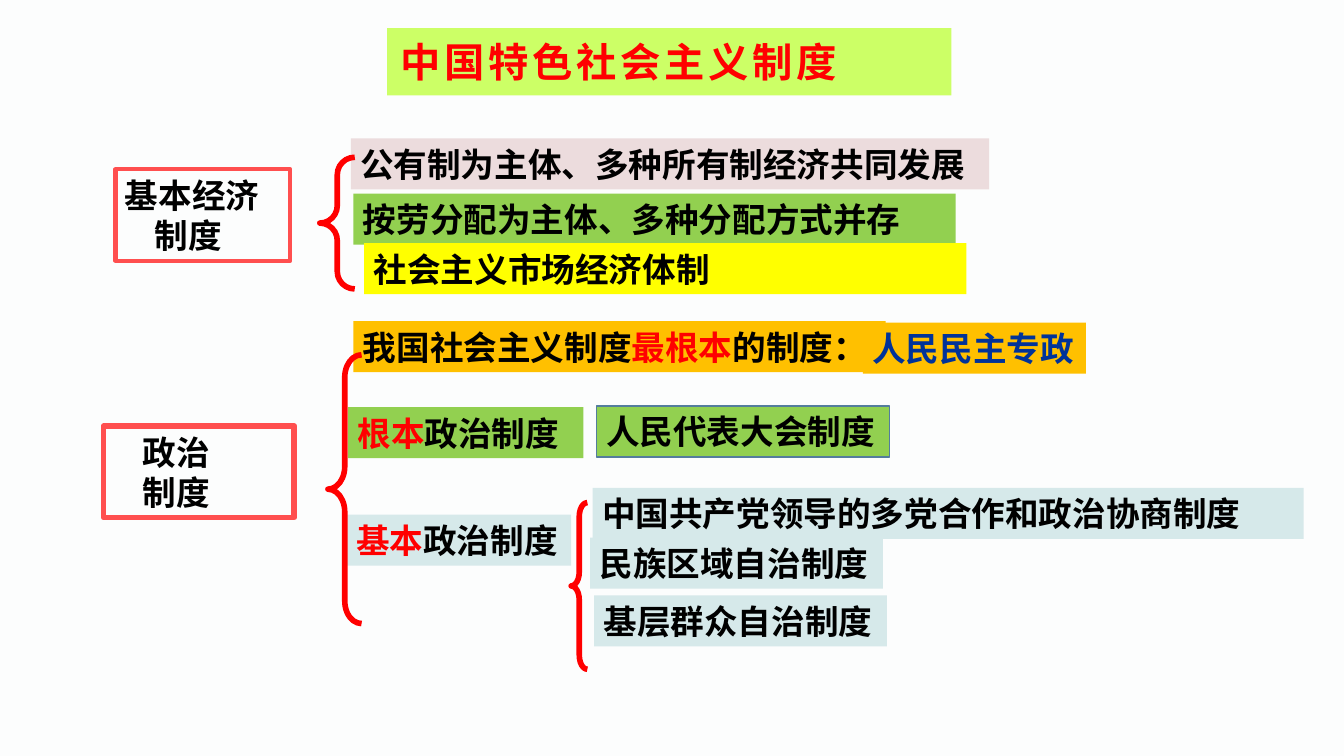
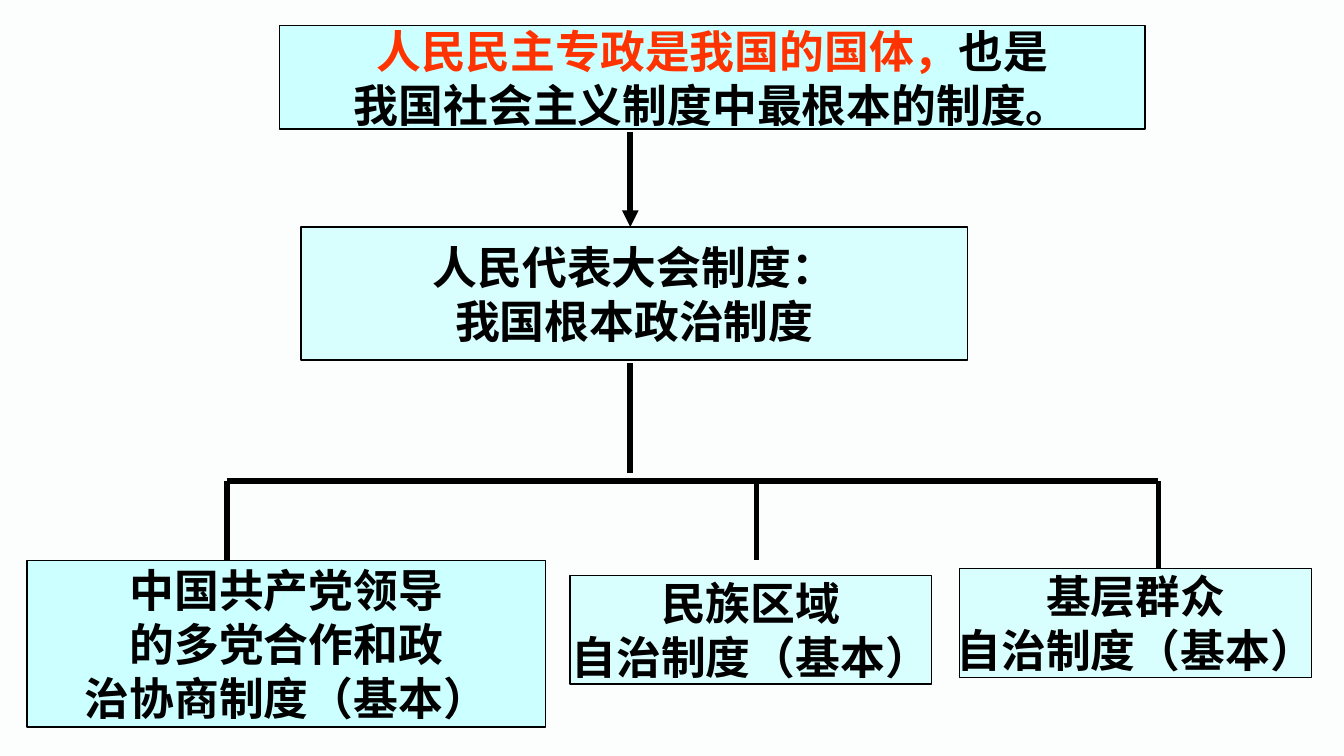
from lxml import etree
from pptx import Presentation
from pptx.dml.color import RGBColor
from pptx.enum.shapes import MSO_CONNECTOR, MSO_SHAPE
from pptx.enum.text import MSO_ANCHOR, MSO_AUTO_SIZE, PP_ALIGN
from pptx.oxml.ns import qn
from pptx.util import Inches, Pt

RECTANGLE, BRACE = MSO_SHAPE.RECTANGLE, MSO_SHAPE.LEFT_BRACE
STRAIGHT = MSO_CONNECTOR.STRAIGHT
TOP, MIDDLE = MSO_ANCHOR.TOP, MSO_ANCHOR.MIDDLE
LEFT, CENTER = PP_ALIGN.LEFT, PP_ALIGN.CENTER
FIXED_SIZE = MSO_AUTO_SIZE.NONE
TITLE_ONLY, BLANK = 5, 6

HAN_FONT, LATIN_FONT = "Noto Sans CJK SC", "Arial"
COLORS = {
    "background": "FCFDFD", "black": "000000", "red": "FF0000",
    "orange_red": "FF3300", "navy": "003399", "lime": "CCFF66",
    "rose": "ECDCDD", "green": "92D050", "yellow": "FFFF00",
    "amber": "FFC000", "mist": "D6E9EA", "frame": "FF4F4F",
    "steel": "547D9D", "cyan": "CCFFFF",
}
COLUMNS = 100  # the grid has square cells, a hundred to the slide's width


class Deck:
    """Holds the shared style and the slide being filled."""

    def __init__(self):
        self.prs = Presentation()
        self.prs.slide_width = Inches(10)
        self.prs.slide_height = Inches(10 * 9 / 16)
        self.cell = self.prs.slide_width // COLUMNS
        self.slide = None

    def grid(self, *cells):
        return [round(n * self.cell) for n in cells]

    def rgb(self, name):
        return RGBColor.from_string(COLORS[name])

    def new_slide(self, layout):
        self.slide = self.prs.slides.add_slide(self.prs.slide_layouts[layout])
        fill = self.slide.background.fill
        fill.solid()
        fill.fore_color.rgb = self.rgb("background")

    def paint(self, shape, fill=None, line=None, width=0.75, opacity=None):
        if fill:
            shape.fill.solid()
            shape.fill.fore_color.rgb = self.rgb(fill)
        else:
            shape.fill.background()
        if opacity:
            color = shape.fill._xPr.find(".//" + qn("a:srgbClr"))
            etree.SubElement(color, qn("a:alpha"), val=str(opacity * 1000))
        if line:
            shape.line.color.rgb = self.rgb(line)
            shape.line.width = Pt(width)
        else:
            shape.line.fill.background()

    def set_text(self, frame, lines, size, color="black", font=HAN_FONT,
                 align=LEFT, indents=(), spacing=None):
        """Each line is a string or a list of strings and (text, color) pairs."""
        for i, line in enumerate(lines):
            paragraph = frame.add_paragraph() if i else frame.paragraphs[0]
            paragraph.alignment = align
            paragraph.font.size = Pt(size)
            paragraph.font.bold = True
            paragraph.font.name = font
            paragraph.font.color.rgb = self.rgb(color)
            properties = paragraph.font._element
            latin = properties.find(qn("a:latin"))
            latin.addnext(etree.Element(qn("a:ea"), typeface=HAN_FONT))
            if spacing:
                properties.set("spc", str(spacing * 100))
            if indents and indents[i]:
                margin, = self.grid(indents[i])
                paragraph._p.get_or_add_pPr().set("marL", str(margin))
            for part in [line] if isinstance(line, str) else line:
                text, accent = (part, None) if isinstance(part, str) else part
                run = paragraph.add_run()
                run.text = text
                if accent:
                    run.font.color.rgb = self.rgb(accent)

    def title(self, at, text):
        title = self.slide.shapes.title
        title.left, title.top, title.width, title.height = self.grid(*at)
        self.paint(title, "lime")
        title.text_frame.auto_size = FIXED_SIZE
        title.text_frame.vertical_anchor = MIDDLE
        self.set_text(title.text_frame, [text], 21.6, "red", spacing=2)

    def box(self, at, **look):
        box = self.slide.shapes.add_shape(RECTANGLE, *self.grid(*at))
        box.shadow.inherit = False
        self.paint(box, **look)
        return box.text_frame

    def label(self, at, lines, color="black", indents=(), **look):
        frame = self.box(at, **look)
        frame.word_wrap = True
        frame.vertical_anchor = TOP
        frame.margin_left, frame.margin_top = self.grid(0.7, 0.4)
        frame.margin_right, frame.margin_bottom = self.grid(0.7, 0.4)
        self.set_text(frame, lines, 18, color, indents=indents)

    def node(self, at, lines, font=HAN_FONT, opacity=None):
        frame = self.box(at, fill="cyan", line="black", opacity=opacity)
        frame.word_wrap = False
        frame.vertical_anchor = MIDDLE
        self.set_text(frame, lines, 24, font=font, align=CENTER)

    def brace(self, at, curve):
        brace = self.slide.shapes.add_shape(BRACE, *self.grid(*at))
        brace.shadow.inherit = False
        brace.adjustments[0] = curve
        self.paint(brace, line="red", width=3)

    def link(self, x1, y1, x2, y2, arrow=False):
        link = self.slide.shapes.add_connector(
            STRAIGHT, *self.grid(x1, y1, x2, y2))
        link.line.color.rgb = self.rgb("black")
        link.line.width = Pt(3)
        if arrow:
            etree.SubElement(link.line._get_or_add_ln(), qn("a:tailEnd"),
                             type="triangle")
        etree.SubElement(link._element.spPr, qn("a:effectLst"))


def systems_overview(deck):
    deck.new_slide(TITLE_ONLY)
    deck.title((28.8, 2.1, 42, 5), "中国特色社会主义制度")
    row = 3.8  # height of a one-line label

    # Basic economic system
    deck.label((8.6, 12.6, 13, 6.8), ["基本经济", "制度"],
               indents=(0, 2.2), line="frame", width=2.25)
    for x, y, width, fill, text in (
            (26.1, 10.3, 47.5, "rose", "公有制为主体、多种所有制经济共同发展"),
            (26.3, 14.4, 44.8, "green", "按劳分配为主体、多种分配方式并存"),
            (27.1, 18.1, 44.8, "yellow", "社会主义市场经济体制")):
        deck.label((x, y, width, row), [text], fill=fill)
    deck.brace((23.8, 11.7, 2.6, 9.8), 0.5)

    # Political system
    deck.label((7.7, 31.7, 14.2, 6.8), ["政治", "制度"],
               indents=(2.2, 2.2), line="frame", width=3)
    deck.label((26.3, 23.9, 39.6, row),
               [["我国社会主义制度", ("最根本", "red"), "的制度："]], fill="amber")
    deck.label((64.2, 24, 16.6, row), ["人民民主专政"], "navy", fill="amber")
    for x, y, width, fill, rank in ((25.9, 30.3, 17.5, "green", "根本"),
                                    (25.8, 38.3, 16.7, "mist", "基本")):
        deck.label((x, y, width, row), [[(rank, "red"), "政治制度"]], fill=fill)
    deck.label((44.4, 30.2, 21.8, row), ["人民代表大会制度"],
               fill="green", line="steel")
    deck.brace((24.4, 26.4, 2.5, 20), 0.67)

    # Basic political systems
    for x, y, width, text in (
            (44.1, 36.3, 52.9, "中国共产党领导的多党合作和政治协商制度"),
            (43.9, 40, 21.8, "民族区域自治制度"),
            (44.2, 44.3, 21.8, "基层群众自治制度")):
        deck.label((x, y, width, row), [text], fill="mist")
    deck.brace((42.5, 37.4, 1.2, 12.4), 0.87)


def political_tree(deck):
    deck.new_slide(BLANK)
    trunk, bar = 46.9, 35.8

    # State system and fundamental political system
    deck.node((20.8, 1.9, 64.4, 7.7),
              [[("人民民主专政是我国的国体，", "orange_red"), "也是"],
               "我国社会主义制度中最根本的制度。"], font=LATIN_FONT)
    deck.link(trunk, 9.8, trunk, 16.9, arrow=True)
    deck.node((22.4, 16.9, 49.6, 9.9),
              ["人民代表大会制度：", "我国根本政治制度"], opacity=73)
    deck.link(trunk, 27, trunk, 35.2)

    # Basic political systems
    branches = (
        (16.9, 41.7, (2, 41.7, 38.6, 12.4), None,
         ["中国共产党领导", "的多党合作和政", "治协商制度（基本）"]),
        (56.3, 41.7, (42.4, 42.8, 26.9, 8.1), 73,
         ["民族区域", "自治制度（基本）"]),
        (86.2, 42.3, (71.4, 42.3, 26.2, 8.1), 73,
         ["基层群众", "自治制度（基本）"]),
    )
    deck.link(branches[0][0], bar, branches[-1][0], bar)
    for x, end, at, opacity, lines in branches:
        deck.node(at, lines, opacity=opacity)
        deck.link(x, bar, x, end)


def main():
    deck = Deck()
    systems_overview(deck)
    political_tree(deck)
    deck.prs.save("out.pptx")


if __name__ == "__main__":
    main()
